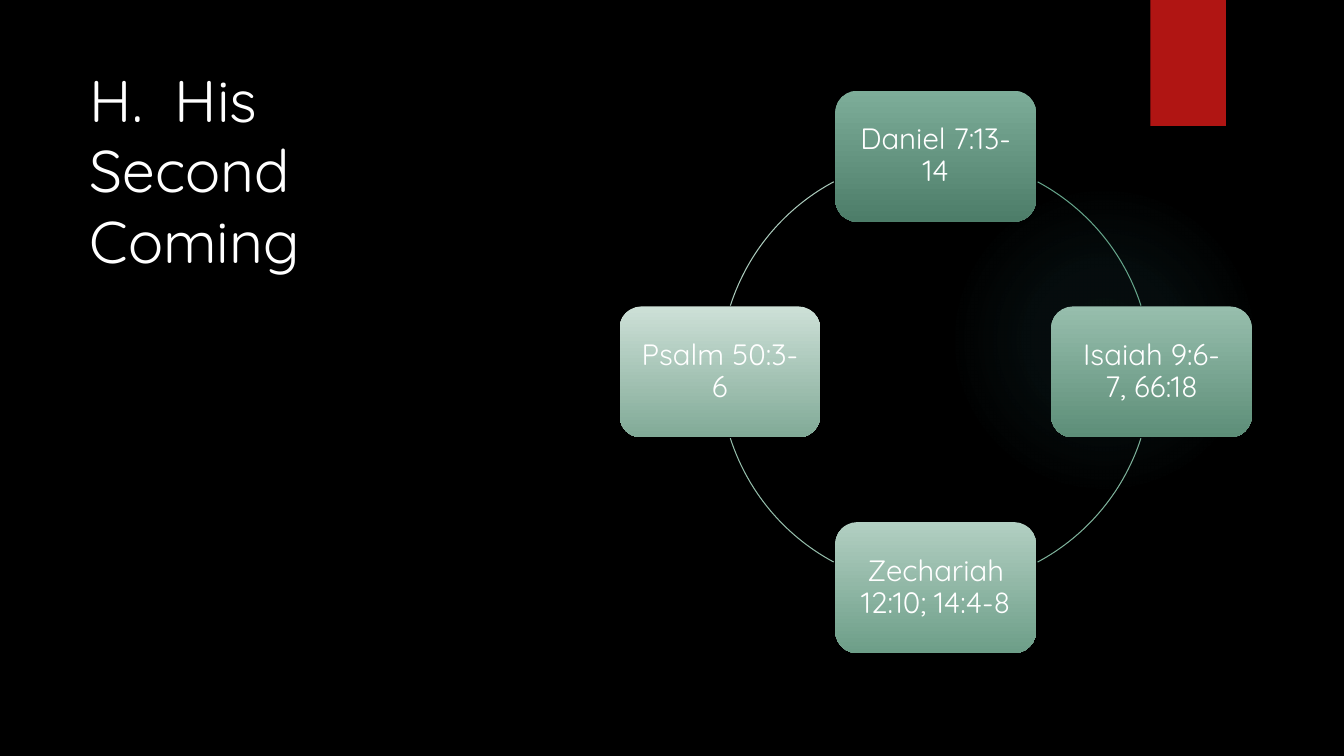
import math

from pptx import Presentation
from pptx.dml.color import RGBColor
from pptx.enum import shapes, text
from pptx.oxml import ns, parse_xml
from pptx.util import Inches, Pt

FONT = "Quicksand"
BLACK = RGBColor(0x00, 0x00, 0x00)
WHITE = RGBColor(0xFF, 0xFF, 0xFF)
RED = RGBColor(0xB0, 0x15, 0x13)
GLOW = RGBColor(0x50, 0xB9, 0xC1)
GLOW_STOPS = [(0, 7), (36, 6), (69, 0)]

PASSAGES = [
    ("Daniel 7:13-14", RGBColor(0x7D, 0xAD, 0x99),
     RGBColor(0x4D, 0x7D, 0x69), RGBColor(0x65, 0xA4, 0x8A)),
    ("Isaiah 9:6-7, 66:18", RGBColor(0x97, 0xBE, 0xAD),
     RGBColor(0x5D, 0x8E, 0x78), RGBColor(0x7D, 0xB1, 0x9A)),
    ("Zechariah 12:10; 14:4-8", RGBColor(0xB2, 0xCF, 0xC2),
     RGBColor(0x6D, 0x9E, 0x88), RGBColor(0x94, 0xBD, 0xAA)),
    ("Psalm 50:3-6", RGBColor(0xCD, 0xE0, 0xD7),
     RGBColor(0x81, 0xAA, 0x97), RGBColor(0xAA, 0xCA, 0xBB)),
]
NODE_WIDTH, NODE_HEIGHT = 1.99, 1.3
SIDE_GAP, TOP_GAP = 17.9, 28.2


def write_text(shape, words, size, align=text.PP_ALIGN.LEFT,
               anchor=text.MSO_ANCHOR.TOP, spacing=None, margins=None):
    """Put one formatted paragraph into a shape."""
    frame = shape.text_frame
    frame.word_wrap = True
    frame.auto_size = text.MSO_AUTO_SIZE.NONE
    frame.vertical_anchor = anchor
    if margins is not None:
        frame.margin_left = frame.margin_right = Inches(margins)
        frame.margin_top = frame.margin_bottom = Inches(margins)
    para = frame.paragraphs[0]
    para.alignment = align
    para.line_spacing = spacing
    span = para.add_run()
    span.text = words
    span.font.name = FONT
    span.font.size = Pt(size)
    span.font.color.rgb = WHITE


def add_plain(page, preset, left, top, width, height):
    """Add a preset shape without outline or shadow."""
    shape = page.shapes.add_shape(
        preset, Inches(left), Inches(top), Inches(width), Inches(height))
    shape.line.fill.background()
    shape.shadow.inherit = False
    return shape


def add_glow(page, left, top, size):
    """Add the faint round glow."""
    glow = add_plain(page, shapes.MSO_SHAPE.OVAL, left, top, size, size)
    stops = "".join(
        f'<a:gs pos="{place * 1000}"><a:srgbClr val="{GLOW}">'
        f'<a:alpha val="{alpha * 1000}"/></a:srgbClr></a:gs>'
        for place, alpha in GLOW_STOPS)
    gradient = parse_xml(
        f'<a:gradFill {ns.nsdecls("a")}><a:gsLst>{stops}</a:gsLst>'
        '<a:path path="circle"><a:fillToRect l="50000" t="50000" '
        'r="50000" b="50000"/></a:path></a:gradFill>')
    glow.element.spPr.find(ns.qn("a:prstGeom")).addnext(gradient)


def add_tab(page, left, top, width, height):
    """Add the red tab at the top edge."""
    tab = add_plain(page, shapes.MSO_SHAPE.RECTANGLE, left, top, width, height)
    tab.fill.solid()
    tab.fill.fore_color.rgb = RED


def add_title(page, left, top, width, height):
    """Place the title placeholder."""
    title = page.shapes.title
    title.left, title.top = Inches(left), Inches(top)
    title.width, title.height = Inches(width), Inches(height)
    write_text(title, "H.  His Second Coming", 42)


def add_node(page, center_x, center_y, words, light, dark):
    """Add one passage box around its center."""
    node = add_plain(page, shapes.MSO_SHAPE.ROUNDED_RECTANGLE,
                     center_x - NODE_WIDTH / 2, center_y - NODE_HEIGHT / 2,
                     NODE_WIDTH, NODE_HEIGHT)
    node.fill.gradient()
    node.fill.gradient_angle = 270
    for stop, color in zip(node.fill.gradient_stops, (light, dark)):
        stop.color.rgb = color
    write_text(node, words, 21, align=text.PP_ALIGN.CENTER,
               anchor=text.MSO_ANCHOR.MIDDLE, spacing=0.9, margins=0.15)


def add_arc(page, left, top, size, start, end, color):
    """Add one thin arc of the ring, with angles in degrees."""
    arc = add_plain(page, shapes.MSO_SHAPE.ARC, left, top, size, size)
    arc.adjustments[0] = start % 360 * 0.6
    arc.adjustments[1] = end % 360 * 0.6
    arc.fill.background()
    arc.line.color.rgb = color
    arc.line.width = Pt(0.75)


def add_cycle(page, left, top, size):
    """Arrange the passages clockwise around a ring in the given square."""
    radius = size / 2
    for index, (words, light, dark, line) in enumerate(PASSAGES):
        angle = index * 90 - 90
        add_node(page, left + radius + radius * math.cos(math.radians(angle)),
                 top + radius + radius * math.sin(math.radians(angle)),
                 words, light, dark)
        gaps = (TOP_GAP, SIDE_GAP) if index % 2 == 0 else (SIDE_GAP, TOP_GAP)
        add_arc(page, left, top, size, angle + gaps[0],
                angle + 90 - gaps[1], line)


def main():
    """Build and save the slide."""
    deck = Presentation()
    deck.slide_width, deck.slide_height = Inches(13.33), Inches(7.5)
    page = deck.slides.add_slide(deck.slide_layouts[5])
    page.background.fill.solid()
    page.background.fill.fore_color.rgb = BLACK
    add_glow(page, 9.41, 1.83, 3.08)
    add_tab(page, 11.41, 0, 0.75, 1.25)
    add_title(page, 0.79, 0.58, 3.51, 5.79)
    add_cycle(page, 7.14, 1.55, 4.28)
    deck.save("out.pptx")


if __name__ == "__main__":
    main()
